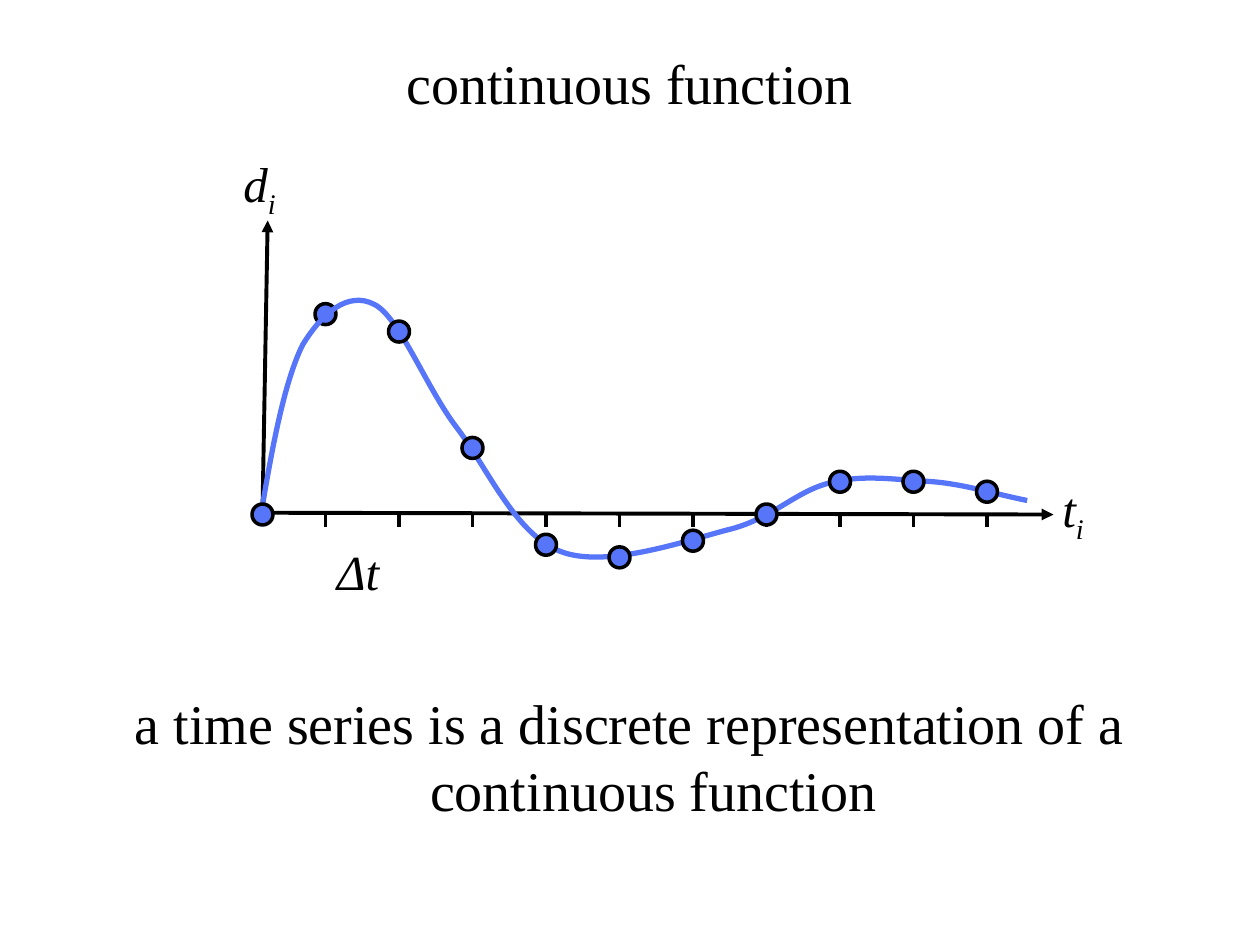
from dataclasses import dataclass

from pptx import Presentation
from pptx.dml.color import RGBColor
from pptx.enum.shapes import MSO_CONNECTOR as Connector, MSO_SHAPE as Shape
from pptx.enum.text import MSO_AUTO_SIZE as AutoSize, PP_ALIGN as Align
from pptx.oxml.ns import qn
from pptx.util import Pt
from lxml.etree import SubElement


@dataclass(frozen=True)
class Theme:
    ink: RGBColor = RGBColor(0x00, 0x00, 0x00)
    series: RGBColor = RGBColor(0x56, 0x75, 0xF8)
    font: str = "Times New Roman"
    statement_size: int = 32
    label_size: int = 28
    axis_width: float = 2.25
    curve_width: float = 3
    sample_width: float = 2


THEME = Theme()
SLIDE_WIDTH, SLIDE_HEIGHT = 720, 540

STATEMENTS = [
    ("a time series is a discrete representation of a continuous function", 390),
    ("continuous function", 24),
]
LABELS = [
    ("d", "i", 132, 84, 36),
    ("t", "i", 600, 270, 36),
    (" Δt", "", 179, 306, 54),
]
AXES = [(152.6, 126), (149.8, 293), (601.9, 294.5)]
CURVE = [
    (149.8, 289.4),
    (156.2, 252.7), (162.7, 216.7), (172.8, 197.3),
    (183.6, 178.6), (199.4, 166.3), (213.8, 174.2),
    (228.2, 181.4), (242.6, 219.6), (259.9, 242.6),
    (277.9, 266.4), (293.8, 304.6), (319.7, 314.6),
    (344.9, 324.7), (388.8, 309.6), (414.7, 303.1),
    (440.6, 296.6), (454.3, 280.8), (473.8, 276.5),
    (493.2, 271.4), (510.5, 273.6), (529.2, 275),
    (548.6, 276.5), (567.4, 281.5), (586.8, 285.8),
]
ORIGIN = (150, 294)
SAMPLE_HEIGHTS = [179.5, 189.5, 256, 311.3, 318.5, 309, 294, 275.3, 275.3, 281]
FIRST_SAMPLE, DELTA_T = 186, 42
TICK_LENGTH, SAMPLE_DIAMETER = 7, 12

SAMPLES = [(FIRST_SAMPLE + DELTA_T * i, y) for i, y in enumerate(SAMPLE_HEIGHTS)]


def set_line(line, color, width):
    line.color.rgb = color
    line.width = Pt(width)


def add_path(slide, points, color, width):
    start, *rest = points
    builder = slide.shapes.build_freeform(*start, scale=float(Pt(1)))
    builder.add_line_segments(rest, close=False)
    path = builder.convert_to_shape()
    path.shadow.inherit = False
    path.fill.background()
    set_line(path.line, color, width)
    return path


def add_axes(slide):
    axes = add_path(slide, AXES, THEME.ink, THEME.axis_width)
    outline = axes.line._get_or_add_ln()
    for end in ("a:headEnd", "a:tailEnd"):
        SubElement(outline, qn(end), type="triangle")


def add_curve(slide):
    curve = add_path(slide, CURVE, THEME.series, THEME.curve_width)
    geometry = next(curve._element.iter(qn("a:path")))
    segments = geometry.findall(qn("a:lnTo"))
    for i in range(0, len(segments), 3):
        bezier = SubElement(geometry, qn("a:cubicBezTo"))
        for segment in segments[i:i + 3]:
            bezier.append(segment[0])
            geometry.remove(segment)


def add_tick(slide, x):
    top = ORIGIN[1]
    tick = slide.shapes.add_connector(
        Connector.STRAIGHT, Pt(x), Pt(top), Pt(x), Pt(top + TICK_LENGTH))
    set_line(tick.line, THEME.ink, THEME.axis_width)
    SubElement(tick._element.spPr, qn("a:effectLst"))


def add_sample(slide, x, y):
    radius = SAMPLE_DIAMETER / 2
    sample = slide.shapes.add_shape(
        Shape.OVAL, Pt(x - radius), Pt(y - radius),
        Pt(SAMPLE_DIAMETER), Pt(SAMPLE_DIAMETER))
    sample.shadow.inherit = False
    sample.fill.solid()
    sample.fill.fore_color.rgb = THEME.series
    set_line(sample.line, THEME.ink, THEME.sample_width)


def set_font(run, size, italic=False):
    run.font.name = THEME.font
    run.font.size = Pt(size)
    run.font.color.rgb = THEME.ink
    run.font.italic = italic


def add_label(slide, symbol, subscript, left, top, width):
    label = slide.shapes.add_textbox(Pt(left), Pt(top), Pt(width), Pt(41.5))
    frame = label.text_frame
    frame.word_wrap = True
    frame.auto_size = AutoSize.SHAPE_TO_FIT_TEXT
    paragraph = frame.paragraphs[0]
    for part in filter(None, (symbol, subscript)):
        run = paragraph.add_run()
        run.text = part
        set_font(run, THEME.label_size, italic=True)
        if part == subscript:
            run.font._element.set("baseline", "-25000")


def add_statement(slide, wording, top):
    statement = slide.shapes.add_textbox(0, Pt(top), Pt(SLIDE_WIDTH), Pt(48))
    frame = statement.text_frame
    frame.word_wrap = True
    frame.text = wording
    paragraph = frame.paragraphs[0]
    paragraph.alignment = Align.CENTER
    properties = paragraph._p.get_or_add_pPr()
    properties.set("marL", str(Pt(27)))
    properties.set("indent", str(-Pt(27)))
    spacing = SubElement(properties, qn("a:spcBef"))
    SubElement(spacing, qn("a:spcPct"), val="20000")
    set_font(paragraph.runs[0], THEME.statement_size)


def main():
    deck = Presentation()
    deck.slide_width, deck.slide_height = Pt(SLIDE_WIDTH), Pt(SLIDE_HEIGHT)
    slide = deck.slides.add_slide(deck.slide_layouts[6])

    add_axes(slide)
    for x, _ in SAMPLES:
        add_tick(slide, x)
    for label in LABELS:
        add_label(slide, *label)
    add_sample(slide, *SAMPLES[0])
    add_curve(slide)
    for sample in SAMPLES[1:] + [ORIGIN]:
        add_sample(slide, *sample)
    for statement in STATEMENTS:
        add_statement(slide, *statement)

    deck.save("out.pptx")


if __name__ == "__main__":
    main()
